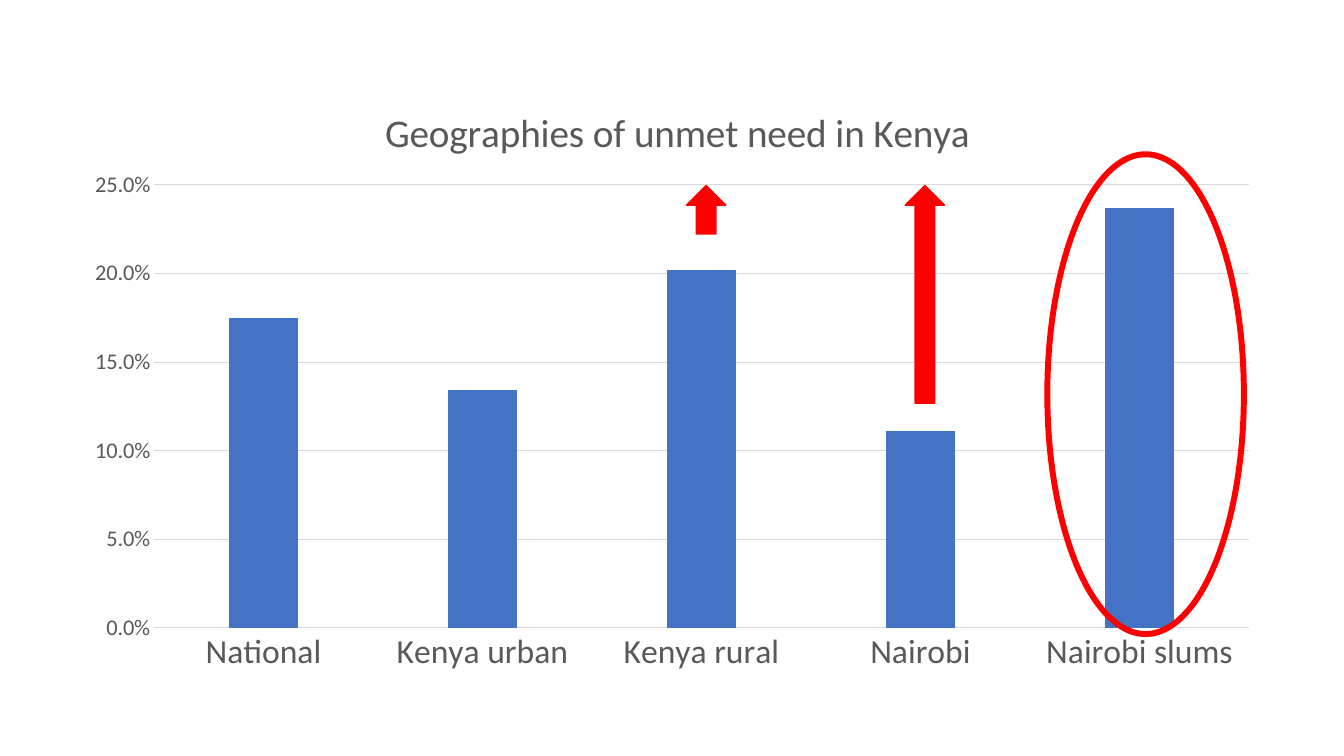
from dataclasses import dataclass

from pptx import Presentation
from pptx.chart.axis import _BaseAxis
from pptx.chart.chart import Chart
from pptx.chart.data import CategoryChartData
from pptx.dml.color import RGBColor
from pptx.enum.chart import XL_CHART_TYPE, XL_TICK_MARK
from pptx.enum.shapes import MSO_SHAPE
from pptx.oxml import parse_xml
from pptx.oxml.ns import nsdecls, qn
from pptx.slide import Slide
from pptx.util import Pt


@dataclass(frozen=True)
class Theme:
    font: str = "Calibri"
    text: RGBColor = RGBColor(0x59, 0x59, 0x59)
    grid: RGBColor = RGBColor(0xD9, 0xD9, 0xD9)
    bar: RGBColor = RGBColor(0x44, 0x72, 0xC4)
    accent: RGBColor = RGBColor(0xFF, 0x00, 0x00)
    title_size: float = 28
    category_size: float = 24
    value_size: float = 16
    hairline: float = 0.75


@dataclass(frozen=True)
class Marker:
    preset: MSO_SHAPE
    left: float
    top: float
    width: float
    height: float
    line_width: float
    filled: bool


THEME = Theme()
CHART_TITLE = "Geographies of unmet need in Kenya"
UNMET_NEED = {
    "National": 0.175,
    "Kenya urban": 0.134,
    "Kenya rural": 0.202,
    "Nairobi": 0.111,
    "Nairobi slums": 0.237,
}
ARROW_TOP = 132.5
ARROW_WIDTH = 28.1
MARKERS = [
    Marker(MSO_SHAPE.OVAL, 748.1, 110.2, 140.4, 342.7, 4.25, False),
    Marker(MSO_SHAPE.UP_ARROW, 646.6, ARROW_TOP, ARROW_WIDTH, 155.5, 1, True),
    Marker(MSO_SHAPE.UP_ARROW, 490.3, ARROW_TOP, ARROW_WIDTH, 34.6, 1, True),
]
CHART_LEFT, CHART_TOP, CHART_WIDTH, CHART_HEIGHT = 50.4, 50.4, 859, 438.5
PLOT_LEFT, PLOT_TOP, PLOT_WIDTH, PLOT_HEIGHT = 110, 132.1, 782.1, 316.5
TITLE_LEFT, TITLE_TOP = 270, 71


def place_in_chart(element, index: int, left: float, top: float,
                   width: float = 0, height: float = 0) -> None:
    settings = {"xMode": "edge", "yMode": "edge",
                "x": (left - CHART_LEFT) / CHART_WIDTH,
                "y": (top - CHART_TOP) / CHART_HEIGHT}
    if width:
        settings = {"layoutTarget": "inner", **settings,
                    "w": width / CHART_WIDTH, "h": height / CHART_HEIGHT}
    content = "".join(f'<c:{name} val="{value}"/>' for name, value in settings.items())
    for layout in element.findall(qn("c:layout")):
        element.remove(layout)
    element.insert(index, parse_xml(
        f'<c:layout {nsdecls("c")}><c:manualLayout>{content}</c:manualLayout></c:layout>'))


def format_axis(axis: _BaseAxis, size: float) -> None:
    axis.major_tick_mark = XL_TICK_MARK.NONE
    axis.minor_tick_mark = XL_TICK_MARK.NONE
    font = axis.tick_labels.font
    font.name, font.size = THEME.font, Pt(size)
    font.color.rgb = THEME.text


def format_title(chart: Chart) -> None:
    chart.has_title = True
    title = chart.chart_title
    title.text_frame.text = CHART_TITLE
    font = title.text_frame.paragraphs[0].font
    font.name, font.size, font.bold = THEME.font, Pt(THEME.title_size), False
    font.color.rgb = THEME.text
    title.include_in_layout = False
    place_in_chart(title._element, 1, TITLE_LEFT, TITLE_TOP)


def add_unmet_need_chart(slide: Slide) -> None:
    data = CategoryChartData(number_format="0.0%")
    data.categories = UNMET_NEED.keys()
    data.add_series("Series 1", UNMET_NEED.values())
    chart = slide.shapes.add_chart(
        XL_CHART_TYPE.COLUMN_CLUSTERED, Pt(CHART_LEFT), Pt(CHART_TOP),
        Pt(CHART_WIDTH), Pt(CHART_HEIGHT), data).chart
    chart.has_legend = False
    chart.font.name = THEME.font
    format_title(chart)

    plot = chart.plots[0]
    plot.gap_width, plot.overlap, plot.vary_by_categories = 219, -27, False
    fill = plot.series[0].format.fill
    fill.solid()
    fill.fore_color.rgb = THEME.bar

    format_axis(chart.category_axis, THEME.category_size)
    format_axis(chart.value_axis, THEME.value_size)
    value_axis = chart.value_axis
    value_axis.minimum_scale, value_axis.maximum_scale = 0, 0.25
    value_axis.major_unit = 0.05
    value_axis.tick_labels.number_format = "0.0%"
    value_axis.tick_labels.number_format_is_linked = False
    value_axis.format.line.fill.background()
    for line in (chart.category_axis.format.line, value_axis.major_gridlines.format.line):
        line.color.rgb = THEME.grid
        line.width = Pt(THEME.hairline)

    plot_area = chart._chartSpace.chart.plotArea
    place_in_chart(plot_area, 0, PLOT_LEFT, PLOT_TOP, PLOT_WIDTH, PLOT_HEIGHT)


def add_marker(slide: Slide, marker: Marker) -> None:
    shape = slide.shapes.add_shape(marker.preset, Pt(marker.left), Pt(marker.top),
                                   Pt(marker.width), Pt(marker.height))
    shape.shadow.inherit = False
    shape.line.color.rgb = THEME.accent
    shape.line.width = Pt(marker.line_width)
    if marker.filled:
        shape.fill.solid()
        shape.fill.fore_color.rgb = THEME.accent
    else:
        shape.fill.background()


def main() -> None:
    presentation = Presentation()
    presentation.slide_width, presentation.slide_height = Pt(960), Pt(540)
    slide = presentation.slides.add_slide(presentation.slide_layouts[6])
    add_unmet_need_chart(slide)
    for marker in MARKERS:
        add_marker(slide, marker)
    presentation.save("out.pptx")


if __name__ == "__main__":
    main()
